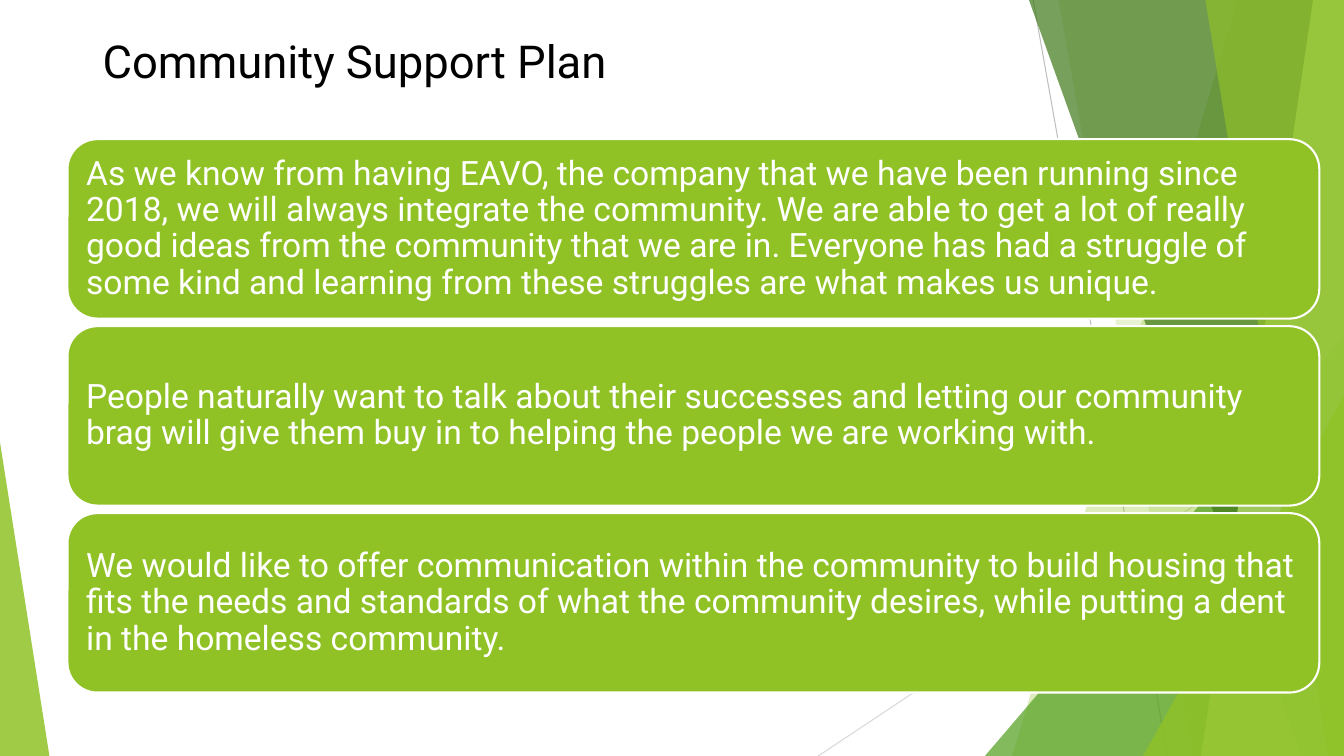
from lxml.etree import SubElement as Sub
from pptx import Presentation
from pptx.dml.color import RGBColor
from pptx.enum.shapes import MSO_CONNECTOR as Link, MSO_SHAPE as Kind
from pptx.enum.text import MSO_ANCHOR as Anchor, PP_ALIGN as Align
from pptx.oxml.ns import qn
from pptx.util import Pt

LIME = RGBColor(0x90, 0xC2, 0x26)
GREEN = RGBColor(0x54, 0xA0, 0x21)
DARK = RGBColor(0x3F, 0x78, 0x19)
PALE = RGBColor(0xC0, 0xE4, 0x74)
GREY = RGBColor(0xBF, 0xBF, 0xBF)
SILVER = RGBColor(0xD9, 0xD9, 0xD9)
WHITE = RGBColor(0xFF, 0xFF, 0xFF)
BLACK = RGBColor(0, 0, 0)
FONT = "Roboto"
WIDE, HIGH = 960, 540

TEXTS = [
    "As we know from having EAVO, the company that we have been running since 2018, "
    "we will always integrate the community. We are able to get a lot of really good "
    "ideas from the community that we are in. Everyone has had a struggle of some kind "
    "and learning from these struggles are what makes us unique.",
    "People naturally want to talk about their successes and letting our community brag "
    "will give them buy in to helping the people we are working with.",
    "We would like to offer communication within the community to build housing that "
    "fits the needs and standards of what the community desires, while putting a dent "
    "in the homeless community.",
]


def tint(shape, color, alpha):
    """Fill a shape with a see-through colour and no outline."""
    shape.shadow.inherit = False
    shape.fill.solid()
    shape.fill.fore_color.rgb = color
    shape.line.fill.background()
    tone = shape.fill._xPr.find(qn("a:solidFill"))[0]
    Sub(tone, qn("a:alpha"), val=str(alpha * 1000))


def ray(shapes, start, end, color):
    """Draw a thin straight line."""
    line = shapes.add_connector(Link.STRAIGHT, *map(Pt, start + end))
    line.line.color.rgb = color
    line.line.width = Pt(0.75)
    Sub(line._element.spPr, qn("a:effectLst"))


def band(shapes, box, top, base, color, alpha):
    """Fill the box to the right of a slanted edge."""
    x, y, w, h = box
    pen = shapes.build_freeform(Pt(x + top), Pt(y), 1.0)
    spots = [(x + w, y), (x + w, y + h), (x + base, y + h)]
    pen.add_line_segments([(Pt(a), Pt(b)) for a, b in spots], close=True)
    tint(pen.convert_to_shape(), color, alpha)


def wedge(shapes, box, peak, color, alpha):
    """Draw a triangle with its peak at a share of the width."""
    shape = shapes.add_shape(Kind.ISOSCELES_TRIANGLE, *map(Pt, box))
    shape.adjustments[0] = peak
    tint(shape, color, alpha)


def decor(shapes, box):
    """Draw the layered green facets along both sides of the box."""
    x, y, w, h = box

    def corner(wide, high):
        return x + w - wide, y + h - high, wide, high

    ray(shapes, (x + 738, y), (x + 834, y + h), GREY)
    ray(shapes, (x + w, y + 290), (x + 584.5, y + h), SILVER)
    band(shapes, box, 884, 723, LIME, 30)
    band(shapes, box, 756, 852, LIME, 20)
    wedge(shapes, corner(256.5, 300), 1, GREEN, 72)
    band(shapes, box, 735, 929.5, DARK, 70)
    band(shapes, box, 938, 858, PALE, 70)
    band(shapes, box, 861, 949, LIME, 65)
    wedge(shapes, corner(143.5, 257), 1, LIME, 80)
    wedge(shapes, (x, y + h - 224, 35.3, 224), 0, LIME, 85)


def write(frame, text, size, color):
    """Set one left-aligned paragraph."""
    frame.word_wrap = True
    para = frame.paragraphs[0]
    para.text = text
    para.alignment = Align.LEFT
    para.font.name = FONT
    para.font.size = Pt(size)
    para.font.color.rgb = color
    return para


def title(shapes, box, text):
    """Write the slide title."""
    frame = shapes.add_textbox(*map(Pt, box)).text_frame
    write(frame, text, 32.4, BLACK)


def cards(shapes, box, texts, gap):
    """Stack equal rounded cards down the box."""
    x, y, w, h = box
    tall = (h - gap * (len(texts) - 1)) / len(texts)
    for i, text in enumerate(texts):
        spot = x, y + i * (tall + gap), w, tall
        card = shapes.add_shape(Kind.ROUNDED_RECTANGLE, *map(Pt, spot))
        card.shadow.inherit = False
        card.fill.solid()
        card.fill.fore_color.rgb = LIME
        card.line.color.rgb = WHITE
        card.line.width = Pt(1.5)
        frame = card.text_frame
        frame.vertical_anchor = Anchor.MIDDLE
        frame.margin_top = frame.margin_bottom = Pt(7.2)
        frame.margin_left = frame.margin_right = Pt(7.2)
        write(frame, text, 24, WHITE).line_spacing = 0.9


def main():
    """Build the slide and save it."""
    deck = Presentation()
    deck.slide_width, deck.slide_height = Pt(WIDE), Pt(HIGH)
    shapes = deck.slides.add_slide(deck.slide_layouts[6]).shapes
    decor(shapes, (0, 0, WIDE, HIGH))
    title(shapes, (66.2, 20.2, 828, 42.5), "Community Support Plan")
    cards(shapes, (48.2, 99.4, 894.2, 395.3), TEXTS, 5.4)
    deck.save("out.pptx")


if __name__ == "__main__":
    main()
